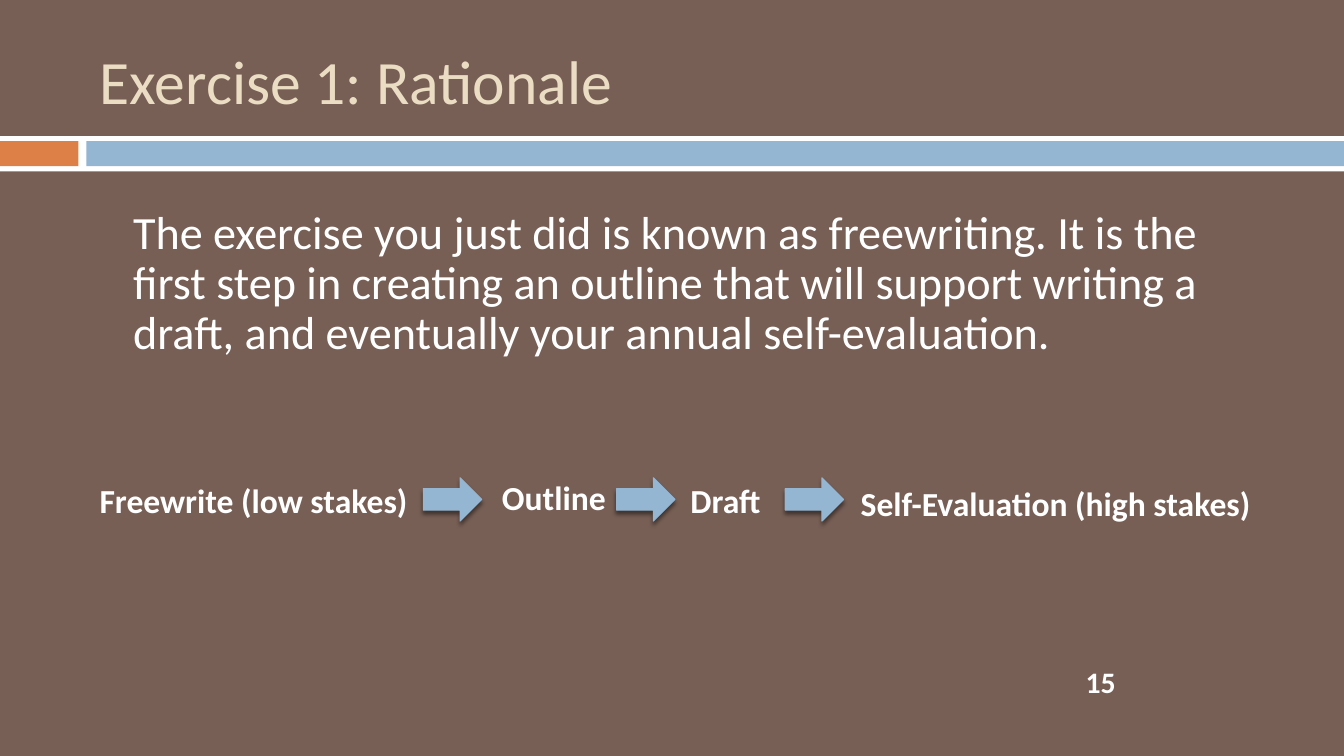
import pptx
import pptx.util
import pptx.dml.color
import pptx.enum.shapes
import pptx.enum.text
import pptx.oxml

Cm, Pt = pptx.util.Cm, pptx.util.Pt
Align = pptx.enum.text.PP_ALIGN
Anchor = pptx.enum.text.MSO_ANCHOR
Fit = pptx.enum.text.MSO_AUTO_SIZE
Kind = pptx.enum.shapes.MSO_SHAPE

FONT = "Calibri"
WHITE, BROWN, ORANGE = "FFFFFF", "775F55", "DD8047"
BLUE, CREAM = "94B6D2", "EBDDC3"
WIDE, HIGH = 33.87, 19.05


def color(fmt, code):
    fmt.rgb = pptx.dml.color.RGBColor.from_string(code)


def place(shape, box):
    shape.left, shape.top, shape.width, shape.height = map(Cm, box)


def write(shape, text, size, code=WHITE, bold=False, align=Align.LEFT):
    """Put one run into the shape's first paragraph and return the paragraph."""
    para = shape.text_frame.paragraphs[0]
    para.alignment = align
    run = para.add_run()
    run.text = text
    run.font.name, run.font.size, run.font.bold = FONT, Pt(size), bold
    color(run.font.color, code)
    return para


def add_solid(slide, kind, box, code):
    shape = slide.shapes.add_shape(kind, *map(Cm, box))
    shape.shadow.inherit = False
    shape.fill.solid()
    color(shape.fill.fore_color, code)
    shape.line.fill.background()
    return shape


def add_bands(slide, box):
    left, top, width, height = box
    edge, tab, gap = 0.13, 1.98, 0.2
    inner = top + edge, height - 2 * edge
    start = left + tab + gap
    add_solid(slide, Kind.RECTANGLE, box, WHITE)
    for x, w, code in ((left, tab, ORANGE), (start, width - start, BLUE)):
        add_solid(slide, Kind.RECTANGLE, (x, inner[0], w, inner[1]), code)


def add_title(slide, box, text):
    title = slide.shapes.title
    place(title, box)
    title.text_frame.auto_size = Fit.NONE
    title.text_frame.vertical_anchor = Anchor.MIDDLE
    write(title, text, 44, CREAM)


def add_body(slide, box, text):
    body = slide.placeholders[1]
    place(body, box)
    body.text_frame.auto_size = Fit.NONE
    para = write(body, text, 33)
    para.line_spacing = 0.9
    para.space_before, para.space_after = Pt(7), Pt(5)
    props = para._p.get_or_add_pPr()
    props.set("marL", "0")
    props.set("indent", "0")
    props.append(pptx.oxml.parse_xml(
        '<a:buNone xmlns:a="http://schemas.openxmlformats.org/drawingml/2006/main"/>'))


def add_label(slide, box, text):
    label = slide.shapes.add_textbox(*map(Cm, box))
    label.text_frame.word_wrap = True
    label.text_frame.auto_size = Fit.SHAPE_TO_FIT_TEXT
    write(label, text, 24, bold=True)


def add_arrow(slide, box):
    arrow = add_solid(slide, Kind.RIGHT_ARROW, box, BLUE)
    color(arrow.line.color, BLUE)
    arrow.line.width = Pt(0.79)
    effects = arrow.element.spPr.find(pptx.oxml.ns.qn("a:effectLst"))
    effects.append(pptx.oxml.parse_xml(
        '<a:outerShdw xmlns:a="http://schemas.openxmlformats.org/drawingml/2006/main"'
        f' blurRad="{Pt(3)}" dist="{Pt(2.4)}" dir="5400000" rotWithShape="0">'
        '<a:srgbClr val="000000"><a:alpha val="45000"/></a:srgbClr></a:outerShdw>'))


def add_flow(slide, box):
    """Draw the writing stages, with an arrow between each two."""
    left, top, _, height = box
    stages = (("Freewrite (low stakes)", 0, 0.07, 9.12),
              ("Outline", 10.14, 0, 5.64),
              ("Draft", 14.89, 0.07, 5.64),
              ("Self-Evaluation (high stakes)", 19.18, 0.15, 10.95))
    for text, x, y, width in stages:
        add_label(slide, (left + x, top + y, width, height), text)
    for x in (8.41, 13.28, 17.53):
        add_arrow(slide, (left + x, top + 0.15, 1.47, 1.09))


def add_number(slide, box, text):
    number = slide.shapes.add_textbox(*map(Cm, box))
    number.text_frame.word_wrap = True
    number.text_frame.vertical_anchor = Anchor.MIDDLE
    para = write(number, text, 21.2, bold=True, align=Align.CENTER)
    para.line_spacing = 0.8


def main():
    deck = pptx.Presentation()
    deck.slide_width, deck.slide_height = Cm(WIDE), Cm(HIGH)
    slide = deck.slides.add_slide(deck.slide_layouts[1])
    slide.background.fill.solid()
    color(slide.background.fill.fore_color, BROWN)
    add_bands(slide, (0, 3.43, WIDE, 0.89))
    add_title(slide, (2.26, 0.64, 30.2, 2.74), "Exercise 1: Rationale")
    add_body(slide, (3.1, 5.16, 28.42, 11.99),
             "The exercise you just did is known as freewriting. It is the first "
             "step in creating an outline that will support writing a draft, and "
             "eventually your annual self-evaluation.")
    add_flow(slide, (2.26, 11.89, 30.13, 1.27))
    add_number(slide, (23.93, 16.76, 7.62, 1.02), "15")
    deck.save("out.pptx")


if __name__ == "__main__":
    main()
